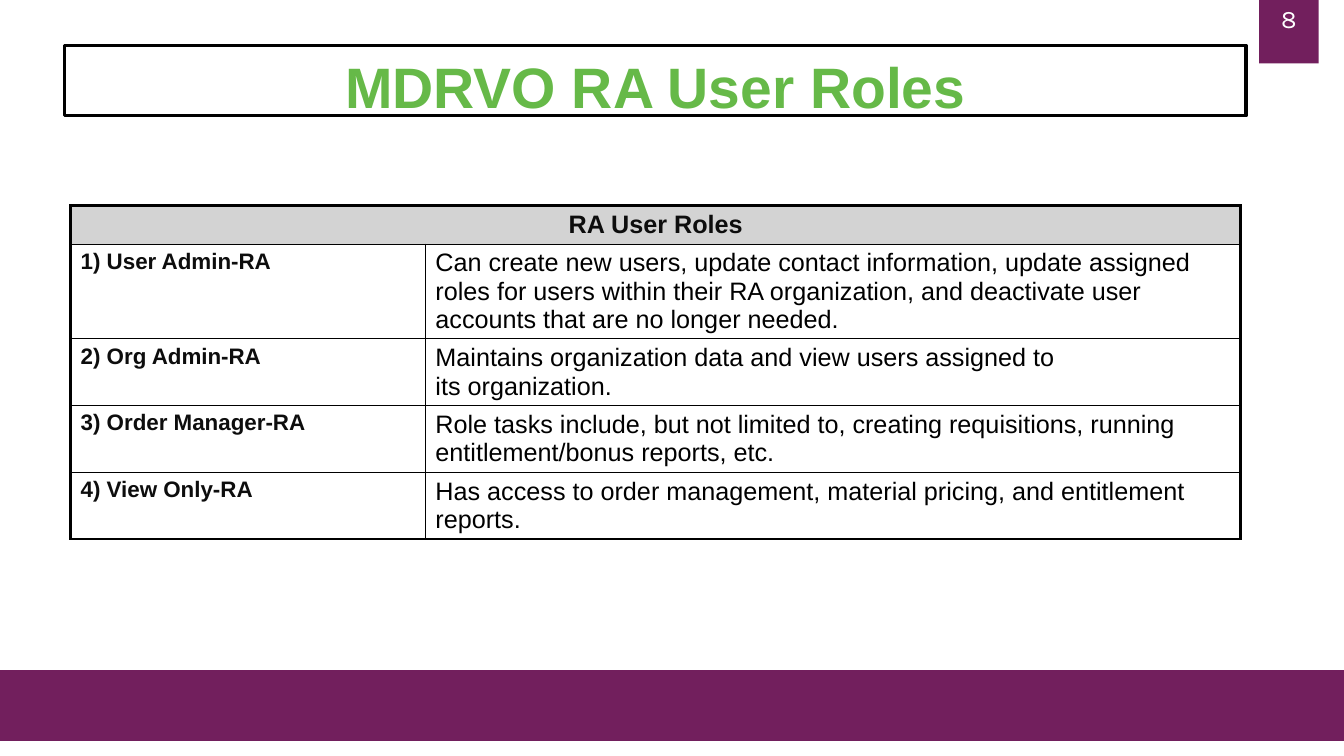
from dataclasses import dataclass

from lxml.etree import SubElement
from pptx import Presentation
from pptx.dml.color import RGBColor
from pptx.enum.shapes import MSO_SHAPE
from pptx.enum.text import MSO_ANCHOR, MSO_AUTO_SIZE, PP_ALIGN
from pptx.oxml.ns import qn
from pptx.util import Cm, Pt


@dataclass(frozen=True)
class Theme:
    purple: str = "721F5D"
    green: str = "66B948"
    grey: str = "D3D3D3"
    black: str = "000000"
    dark: str = "0D0D0D"
    white: str = "FFFFFF"
    font: str = "Arial"
    number_font: str = "Karla"
    title_size: float = 40.7
    body_size: float = 18
    role_size: float = 16
    thick: float = 2.25
    thin: float = 0.75


THEME = Theme()
NO_BREAK_SPACE = chr(160)
HEADING = "RA User Roles"
ROLES = [
    ("1) User Admin-RA",
     "Can create new users, update contact information, update assigned roles "
     "for users within their RA organization, and deactivate user accounts "
     "that are no longer needed."),
    ("2) Org Admin-RA",
     "Maintains organization data and view users assigned to "
     f"its{NO_BREAK_SPACE}organization."),
    ("3) Order Manager-RA",
     "Role tasks include, but not limited to, creating requisitions, running "
     "entitlement/bonus reports, etc."),
    ("4) View Only-RA",
     "Has access to order management, material pricing, and entitlement reports."),
]
COLUMN_WIDTHS = [Cm(8.94), Cm(20.55)]
ROW_HEIGHTS = [Cm(0.97), Cm(2.39)] + [Cm(1.68)] * 3


def write_text(text_frame, text, size, color, font=THEME.font, bold=False,
               **paragraph_format):
    """Put one formatted run in a text frame."""
    paragraph = text_frame.paragraphs[0]
    for name, value in paragraph_format.items():
        setattr(paragraph, name, value)
    run = paragraph.add_run()
    run.text = text
    font_format = {"name": font, "size": Pt(size), "bold": bold}
    for name, value in font_format.items():
        setattr(run.font, name, value)
    run.font.color.rgb = RGBColor.from_string(color)


def add_title(slide, text):
    title = slide.shapes.title
    frame_format = {"left": Cm(1.63), "top": Cm(1.14),
                    "width": Cm(29.77), "height": Cm(1.78)}
    for name, value in frame_format.items():
        setattr(title, name, value)
    title.line.color.rgb = RGBColor.from_string(THEME.black)
    title.line.width = Pt(THEME.thick)
    text_format = {"vertical_anchor": MSO_ANCHOR.TOP, "word_wrap": True,
                   "auto_size": MSO_AUTO_SIZE.NONE, "margin_top": Cm(0.16)}
    for name, value in text_format.items():
        setattr(title.text_frame, name, value)
    write_text(title.text_frame, text, THEME.title_size, THEME.green, bold=True,
               alignment=PP_ALIGN.CENTER, space_before=Pt(10), line_spacing=1.0)


def add_block(slide, left, top, width, height):
    """Add a plain purple rectangle."""
    block = slide.shapes.add_shape(MSO_SHAPE.RECTANGLE, left, top, width, height)
    block.shadow.inherit = False
    block.fill.solid()
    block.fill.fore_color.rgb = RGBColor.from_string(THEME.purple)
    block.line.fill.background()
    return block


def add_page_number(slide, number):
    block = add_block(slide, Cm(31.73), Cm(-0.03), Cm(1.5), Cm(1.63))
    block.text_frame.vertical_anchor = MSO_ANCHOR.TOP
    write_text(block.text_frame, number, THEME.body_size, THEME.white,
               font=THEME.number_font, alignment=PP_ALIGN.CENTER)


def set_borders(cell, thick_sides):
    """Draw all four sides, with the outer ones thick."""
    properties = cell._tc.get_or_add_tcPr()
    for position, side in enumerate("LRTB"):
        width = THEME.thick if side in thick_sides else THEME.thin
        line = properties.makeelement(qn(f"a:ln{side}"), {"w": str(Pt(width))})
        fill = SubElement(line, qn("a:solidFill"))
        SubElement(fill, qn("a:srgbClr"), val=THEME.black)
        properties.insert(position, line)


def add_roles_table(slide):
    table = slide.shapes.add_table(
        len(ROW_HEIGHTS), len(COLUMN_WIDTHS), Cm(1.78), Cm(5.18),
        sum(COLUMN_WIDTHS), sum(ROW_HEIGHTS)).table
    table.horz_banding = False
    for column, width in zip(table.columns, COLUMN_WIDTHS):
        column.width = width
    for row, height in zip(table.rows, ROW_HEIGHTS):
        row.height = height

    # Fills and borders
    last_row = len(ROLES)
    for row_index, row in enumerate(table.rows):
        for column_index, cell in enumerate(row.cells):
            if row_index == 0:
                cell.fill.solid()
                cell.fill.fore_color.rgb = RGBColor.from_string(THEME.grey)
            else:
                cell.fill.background()
            outer = "L" if column_index == 0 else "R"
            outer += {0: "TR", last_row: "B"}.get(row_index, "")
            set_borders(cell, outer)

    # Heading across both columns
    heading = table.cell(0, 0)
    heading.merge(table.cell(0, 1))
    write_text(heading.text_frame, HEADING, THEME.body_size, THEME.dark,
               bold=True, alignment=PP_ALIGN.CENTER)

    # Roles and what they do
    for row_index, (role, description) in enumerate(ROLES, start=1):
        write_text(table.cell(row_index, 0).text_frame, role,
                   THEME.role_size, THEME.dark, bold=True)
        write_text(table.cell(row_index, 1).text_frame, description,
                   THEME.body_size, THEME.black)


def main():
    presentation = Presentation()
    presentation.slide_width = Cm(33.87)
    presentation.slide_height = Cm(19.05)
    title_only = presentation.slide_layouts[5]
    slide = presentation.slides.add_slide(title_only)

    add_title(slide, "MDRVO RA User Roles")
    add_block(slide, Cm(0), Cm(16.89), presentation.slide_width, Cm(1.78))
    add_roles_table(slide)
    add_page_number(slide, "8")
    presentation.save("out.pptx")


if __name__ == "__main__":
    main()
